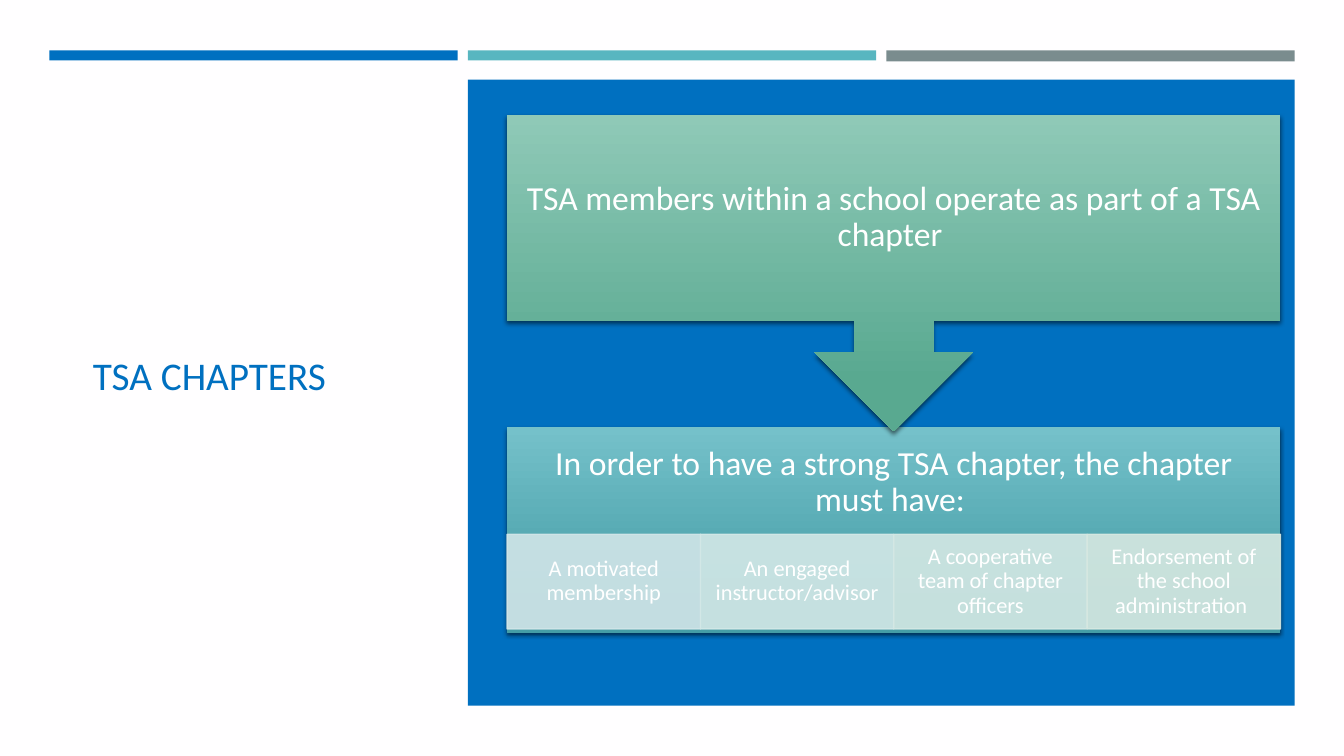
"""Build the TSA chapters slide with its callout and requirements panel."""
from lxml.etree import SubElement
from pptx import Presentation
from pptx.dml.color import RGBColor
from pptx.enum.shapes import MSO_SHAPE as Preset
from pptx.enum.text import MSO_ANCHOR as Anchor, PP_ALIGN as Align
from pptx.oxml import parse_xml
from pptx.oxml.ns import qn
from pptx.util import Inches, Pt

TITLE = "TSA CHAPTERS"
CALLOUT = "TSA members within a school operate as part of a TSA chapter "
PANEL = "In order to have a strong TSA chapter, the chapter must have: "
REQUIREMENTS = [
    ("A motivated membership", "D1E5E8"),
    ("An engaged instructor/advisor", "D3E8E7"),
    ("A cooperative team of chapter officers", "D4E8E4"),
    ("Endorsement of the school administration ", "D6E8E1"),
]
COLORS = {
    "paper": "FFFEFF", "blue": "0070C0", "teal": "58B6C0", "gray": "7A8C8E",
    "white": "FFFFFF", "callout top": "8FC9B7", "callout bottom": "59A990",
    "panel top": "75C1CA", "panel bottom": "459DA6",
}
BARS = [("blue", 0.1), ("teal", 0.1), ("gray", 0.11)]
BAR_LEFT, BAR_TOP, BAR_WIDTH, BAR_STEP = 0.49, 0.5, 4.05, 4.15
DIAGRAM_LEFT, DIAGRAM_WIDTH = 5.03, 7.67
PANEL_TOP, PANEL_HEIGHT, HEADING_HEIGHT = 4.24, 2.04, 1.1
CELL_TOP, CELL_HEIGHT = 5.3, 0.94
INSET = 0.19
SHADOW = (
    '<a:effectLst xmlns:a="http://schemas.openxmlformats.org/drawingml/2006/main">'
    '<a:outerShdw blurRad="38100" dist="25400" dir="5400000" rotWithShape="0">'
    '<a:srgbClr val="000000"><a:alpha val="55000"/></a:srgbClr>'
    '</a:outerShdw></a:effectLst>'
)


def rgb(value):
    return RGBColor.from_string(value)


def add_block(slide, box, color=None, preset=Preset.RECTANGLE):
    shape = slide.shapes.add_shape(preset, *map(Inches, box))
    shape.shadow.inherit = False
    shape.line.fill.background()
    if color:
        shape.fill.solid()
        shape.fill.fore_color.rgb = rgb(color)
    return shape


def add_gradient_block(slide, box, name, preset):
    shape = add_block(slide, box, preset=preset)
    shape.fill.gradient()
    shape.fill.gradient_angle = 270
    ends = [(0, "top"), (0.84, "bottom")]
    for stop, (position, end) in zip(shape.fill.gradient_stops, ends):
        stop.position = position
        stop.color.rgb = rgb(COLORS[f"{name} {end}"])
    properties = shape._element.spPr
    properties.replace(properties.find(qn("a:effectLst")), parse_xml(SHADOW))
    return shape


def write(shape, text, size, insets, color="white", align=Align.CENTER, spacing=0.9):
    frame = shape.text_frame
    frame.word_wrap = True
    frame.vertical_anchor = Anchor.MIDDLE
    (frame.margin_left, frame.margin_top,
     frame.margin_right, frame.margin_bottom) = map(Inches, insets)
    frame.text = text
    paragraph = frame.paragraphs[0]
    paragraph.alignment = align
    paragraph.line_spacing = spacing
    paragraph.font.name = "Calibri"
    paragraph.font.size = Pt(size)
    paragraph.font.color.rgb = rgb(COLORS[color])


def add_cell(slide, index, text, color):
    width = DIAGRAM_WIDTH / len(REQUIREMENTS)
    box = (DIAGRAM_LEFT + index * width, CELL_TOP, width, CELL_HEIGHT)
    cell = add_block(slide, box, color)
    cell.line.color.rgb = rgb(color)
    cell.line.width = Pt(1)
    for element in cell._element.spPr.iter(qn("a:srgbClr")):
        SubElement(element, qn("a:alpha"), val="90000")
    write(cell, text, 16, (0.12, 0.02, 0.12, 0.02))


def main():
    presentation = Presentation()
    presentation.slide_width, presentation.slide_height = Inches(13.33), Inches(7.5)
    slide = presentation.slides.add_slide(presentation.slide_layouts[5])
    slide.background.fill.solid()
    slide.background.fill.fore_color.rgb = rgb(COLORS["paper"])

    title = slide.shapes.title
    title.left, title.top, title.width, title.height = map(Inches, (0.82, 1.14, 3.34, 5.15))
    write(title, TITLE, 28, (0.1, 0.05, 0.1, 0.05), "blue", Align.LEFT, 1.0)

    for index, (color, height) in enumerate(BARS):
        left = BAR_LEFT + index * BAR_STEP
        add_block(slide, (left, BAR_TOP, BAR_WIDTH, height), COLORS[color])
    add_block(slide, (4.64, 0.79, 8.2, 6.21), COLORS["blue"])

    panel = add_gradient_block(
        slide, (DIAGRAM_LEFT, PANEL_TOP, DIAGRAM_WIDTH, PANEL_HEIGHT),
        "panel", Preset.RECTANGLE)
    below_heading = PANEL_HEIGHT - HEADING_HEIGHT + INSET
    write(panel, PANEL, 24, (INSET, INSET, INSET, below_heading))
    for index, (text, color) in enumerate(REQUIREMENTS):
        add_cell(slide, index, text, color)

    callout = add_gradient_block(
        slide, (DIAGRAM_LEFT, 1.14, DIAGRAM_WIDTH, 3.14),
        "callout", Preset.DOWN_ARROW_CALLOUT)
    write(callout, CALLOUT, 24, (INSET,) * 4)
    presentation.save("out.pptx")


if __name__ == "__main__":
    main()
